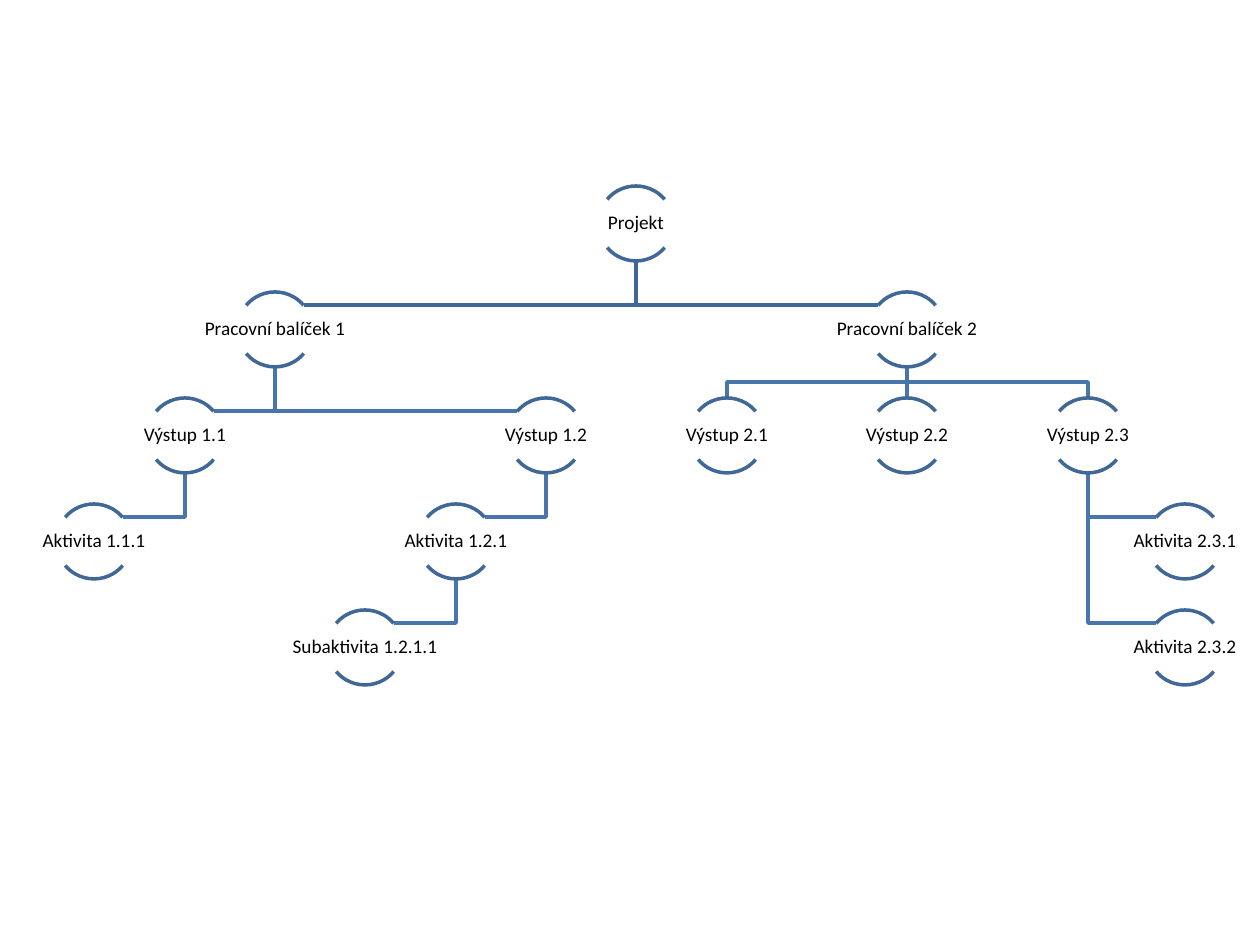
from dataclasses import dataclass

from lxml import etree
from pptx import Presentation
from pptx.dml.color import RGBColor
from pptx.enum.shapes import MSO_CONNECTOR as Connector, MSO_SHAPE as Shape
from pptx.enum.text import MSO_ANCHOR as Anchor, PP_ALIGN as Align
from pptx.oxml.ns import qn
from pptx.util import Emu, Pt

PX = 914400 / 126  # one px in EMU


@dataclass(frozen=True)
class Theme:
    arc: RGBColor = RGBColor(0x3F, 0x67, 0x97)
    branch: RGBColor = RGBColor(0x48, 0x75, 0xAC)
    text: RGBColor = RGBColor(0, 0, 0)
    font: str = "Calibri"
    size: Pt = Pt(11)
    line: Pt = Pt(2)


THEME = Theme()

# Grid, in px
FIRST_ROW, ROW_STEP = 186, 106
DIAMETER = 75
SHOULDER_X, SHOULDER_Y = 29, 13  # where a side link meets the upper arc
LABEL_WIDTH, LABEL_HEIGHT = 150, 48
TOP_ARC, BOTTOM_ARC = (220, 320), (40, 140)  # degrees

# Label: (centre x, row, parent, side of the node the link enters)
NODES = {
    "Projekt": (636, 0, None, None),
    "Pracovní balíček 1": (275, 1, "Projekt", "shoulder"),
    "Výstup 1.1": (185, 2, "Pracovní balíček 1", "shoulder"),
    "Aktivita 1.1.1": (94, 3, "Výstup 1.1", "shoulder"),
    "Výstup 1.2": (546, 2, "Pracovní balíček 1", "shoulder"),
    "Aktivita 1.2.1": (456, 3, "Výstup 1.2", "shoulder"),
    "Subaktivita 1.2.1.1": (365, 4, "Aktivita 1.2.1", "shoulder"),
    "Pracovní balíček 2": (907, 1, "Projekt", "shoulder"),
    "Výstup 2.1": (727, 2, "Pracovní balíček 2", "top"),
    "Výstup 2.2": (907, 2, "Pracovní balíček 2", "top"),
    "Výstup 2.3": (1088, 2, "Pracovní balíček 2", "top"),
    "Aktivita 2.3.1": (1185, 3, "Výstup 2.3", "shoulder"),
    "Aktivita 2.3.2": (1185, 4, "Výstup 2.3", "shoulder"),
}


def px(*lengths):
    return [Emu(round(length * PX)) for length in lengths]


def apply(target, values):
    for name, value in values.items():
        setattr(target, name, value)


def row_top(row):
    return FIRST_ROW + row * ROW_STEP


def style_line(shape, color):
    shape.line.color.rgb = color
    shape.line.width = THEME.line


def link_points(label):
    """Corner points from the foot of the parent to the node."""
    x, row, parent, entry = NODES[label]
    parent_x, parent_row = NODES[parent][:2]
    top, foot = row_top(row), row_top(parent_row) + DIAMETER
    if entry == "top":
        if x == parent_x:
            return [(x, foot), (x, top)]
        middle = (foot + top) // 2
        return [(parent_x, foot), (parent_x, middle), (x, middle), (x, top)]
    shoulder = x + SHOULDER_X if x < parent_x else x - SHOULDER_X
    level = top + SHOULDER_Y
    return [(parent_x, foot), (parent_x, level), (shoulder, level)]


def add_link(shapes, points, color):
    if len(points) == 2:
        link = shapes.add_connector(Connector.STRAIGHT, *px(*points[0], *points[1]))
        etree.SubElement(link._element.spPr, qn("a:effectLst"))
    else:
        builder = shapes.build_freeform(*points[0], scale=PX)
        builder.add_line_segments(points[1:], close=False)
        link = builder.convert_to_shape()
        link.fill.background()
        link.shadow.inherit = False
    style_line(link, color)


def add_arc(shapes, x, top, angles):
    arc = shapes.add_shape(Shape.ARC, *px(x - DIAMETER / 2, top, DIAMETER, DIAMETER))
    for index, angle in enumerate(angles):
        arc.adjustments[index] = angle * 0.6  # 60000ths of a degree over 100000
    arc.fill.background()
    arc.shadow.inherit = False
    style_line(arc, THEME.arc)


def add_label(shapes, x, top, text):
    left = x - LABEL_WIDTH // 2
    box = shapes.add_textbox(*px(left, top + SHOULDER_Y, LABEL_WIDTH, LABEL_HEIGHT))
    frame = box.text_frame
    margins = {f"margin_{side}": px(1)[0] for side in ("left", "top", "right", "bottom")}
    apply(frame, {"word_wrap": True, "vertical_anchor": Anchor.MIDDLE, **margins})
    para = frame.paragraphs[0]
    apply(para, {"alignment": Align.CENTER, "line_spacing": 0.9})
    span = para.add_run()
    span.text = text
    apply(span.font, {"name": THEME.font, "size": THEME.size})
    span.font.color.rgb = THEME.text


def add_node(shapes, label):
    x, row = NODES[label][:2]
    top = row_top(row)
    for angles in (TOP_ARC, BOTTOM_ARC):
        add_arc(shapes, x, top, angles)
    add_label(shapes, x, top, label)


def main():
    deck = Presentation()
    width, height = px(1260, 945)
    apply(deck, {"slide_width": width, "slide_height": height})
    page = deck.slides.add_slide(deck.slide_layouts[6])

    # Links lie behind the nodes, the lowest rows furthest back
    for label, (_, row, parent, _) in reversed(NODES.items()):
        if parent:
            color = THEME.arc if row == 1 else THEME.branch
            add_link(page.shapes, link_points(label), color)

    # Nodes
    for label in NODES:
        add_node(page.shapes, label)

    deck.save("out.pptx")


if __name__ == "__main__":
    main()
